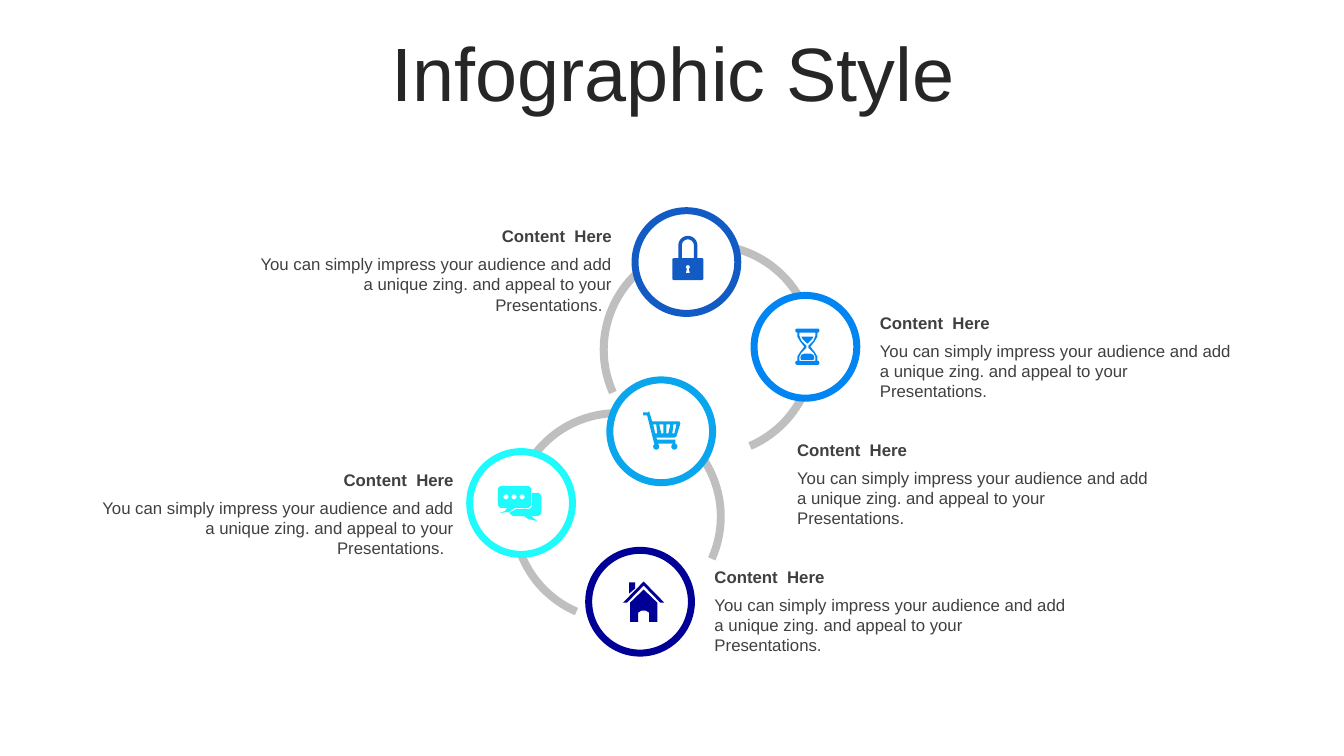
from dataclasses import dataclass
from math import cos, radians, sin

from pptx import Presentation
from pptx.dml.color import RGBColor
from pptx.enum.shapes import MSO_SHAPE
from pptx.enum.text import MSO_ANCHOR, MSO_AUTO_SIZE, PP_ALIGN
from pptx.util import Pt


@dataclass(frozen=True)
class Theme:
    """Colours, font, type sizes and shared measures in points."""
    font: str = "Arial"
    title_size: int = 54
    text_size: int = 12
    title: str = "262626"
    text: str = "404040"
    paper: str = "FFFFFF"
    track: str = "BFBFBF"
    ring_size: float = 73.4
    ring_line: int = 5
    caption_width: float = 270.7
    icon_unit: float = 0.72


THEME = Theme()
HEADING = "Content  Here"
BODY = ("You can simply impress your audience and add a unique zing. "
        "and appeal to your Presentations.")


def arc(x, y, radius, start, end, steps=12):
    """Return points along a circular arc, with angles in degrees."""
    angles = [radians(start + (end - start) * i / steps) for i in range(steps + 1)]
    return [(x + radius * cos(a), y + radius * sin(a)) for a in angles]


def disc(x, y, radius):
    """Return the outline of a disc."""
    return arc(x, y, radius, 0, 360, 24)


def rounded(left, top, right, bottom, radius):
    """Return the outline of a rectangle with round corners."""
    return (arc(left + radius, top + radius, radius, 180, 270)
            + arc(right - radius, top + radius, radius, 270, 360)
            + arc(right - radius, bottom - radius, radius, 0, 90)
            + arc(left + radius, bottom - radius, radius, 90, 180))


def symmetric(half, width):
    """Complete a left half outline with its mirror image."""
    return half + [(width - x, y) for x, y in reversed(half)]


LOCK = [
    rounded(0, 22, 31, 44, 2),
    arc(15.5, 9.5, 9.5, 180, 360) + [(25, 22), (21.5, 22)]
    + arc(15.5, 9.5, 6, 360, 180) + [(9.5, 22), (6, 22)],
    arc(15.5, 31, 2, 120, 420) + [(17.5, 37), (13.5, 37)],
]
HOURGLASS = [
    rounded(0, 0, 24, 4, 2),
    rounded(0, 32, 24, 36, 2),
    symmetric([(2, 4), (2, 8), (5, 13), (9, 18), (5, 23), (2, 28), (2, 32)], 24),
    symmetric([(4, 4), (4, 7), (6, 12), (11, 17), (11, 19), (6, 24), (4, 28), (4, 32)], 24),
    symmetric([(6, 8), (7, 10), (12, 15)], 24),
    symmetric([(9, 25), (6, 26), (5, 29), (6, 31)], 24),
]
CART = [
    [(6, 0), (9, 10), (36, 10), (37, 12), (33, 25), (31, 26), (13, 26), (14, 28),
     (32, 28), (32, 32), (11, 32), (4, 4), (0, 4), (0, 1), (5, 1)],
    [(10, 13), (12, 22), (14, 22), (13, 13)],
    [(16, 13), (18, 22), (20, 22), (20, 13)],
    [(23, 13), (23, 22), (25, 22), (27, 13)],
    [(30, 13), (29, 22), (31, 22), (33, 13)],
    disc(13, 35, 3),
    disc(31, 35, 3),
]
CHAT = [
    arc(4, 4, 4, 180, 270) + arc(29, 4, 4, 270, 360) + arc(29, 18, 4, 0, 90)
    + [(17, 22), (11, 26), (2, 27), (7, 25), (9, 22)] + arc(4, 18, 4, 90, 180),
    [(34, 7)] + arc(39, 11, 4, 270, 360) + arc(39, 26, 4, 0, 90)
    + [(33, 30), (39, 35), (30, 33), (26, 30), (15, 30), (11, 27), (18, 23)]
    + arc(30, 19, 4, 90, 0),
    *[disc(x, 11, 2.5) for x in (8, 16, 24)],
]
HOUSE = [
    symmetric([(20.5, 8), (7, 21), (7, 40), (15, 40), (15, 31), (18, 29)], 41),
    symmetric([(20.5, 0), (0, 21), (4, 21), (20.5, 4)], 41),
    [(6, 1), (12, 1), (12, 7), (6, 12)],
]

TRACKS = [(364.3, 292.3, 153.4, True), (428.4, 172.1, 155.5, False)]
LEFT, RIGHT = PP_ALIGN.LEFT, PP_ALIGN.RIGHT
STEPS = [
    ("125AC4", (453.6, 150.5), LOCK, (480.2, 168.5), (173.5, 157.7), RIGHT),
    ("0085F2", (538.6, 211), HOURGLASS, (568.1, 234.7), (621.4, 219.6), LEFT),
    ("0AA6ED", (435.6, 271.4), CART, (459.4, 293.8), (562.3, 310.3), LEFT),
    ("1FFBFD", (335.5, 322.6), CHAT, (355.7, 347), (60.5, 331.9), RIGHT),
    ("000096", (420.5, 393.1), HOUSE, (445, 415.4), (503.3, 401), LEFT),
]


def assign(target, values):
    """Set every attribute in a dict of format values."""
    for key, value in values.items():
        setattr(target, key, value)


def paint(shape, color):
    """Give a shape a plain fill without line or shadow."""
    shape.shadow.inherit = False
    shape.fill.solid()
    shape.fill.fore_color.rgb = RGBColor.from_string(color)
    shape.line.fill.background()


def write(frame, words, color, font, paragraph, layout):
    """Fill a text frame with one formatted paragraph."""
    assign(frame, {"word_wrap": True, **layout})
    line = frame.paragraphs[0]
    assign(line, paragraph)
    run = line.add_run()
    run.text = words
    assign(run.font, {"name": THEME.font, **font})
    run.font.color.rgb = RGBColor.from_string(color)


def add_title(slide, left, top, width, height):
    """Place the slide title in its box."""
    title = slide.shapes.title
    assign(title, {"left": Pt(left), "top": Pt(top), "width": Pt(width), "height": Pt(height)})
    write(title.text_frame, "Infographic Style", THEME.title,
          {"size": Pt(THEME.title_size)},
          {"alignment": PP_ALIGN.CENTER, "line_spacing": 0.9, "space_before": Pt(10)},
          {"vertical_anchor": MSO_ANCHOR.MIDDLE, "auto_size": MSO_AUTO_SIZE.NONE})


def add_track(slide, left, top, size, flipped):
    """Draw one curved track that joins the rings."""
    track = slide.shapes.add_shape(MSO_SHAPE.BLOCK_ARC, Pt(left), Pt(top), Pt(size), Pt(size))
    for index, value in enumerate((155.887 * 0.6, 66.705 * 0.6, 0.037)):
        track.adjustments[index] = value
    if flipped:
        track._element.spPr.xfrm.set("flipH", "1")
    paint(track, THEME.track)


def add_ring(slide, left, top, color):
    """Draw a white disc with a coloured rim."""
    size = Pt(THEME.ring_size)
    ring = slide.shapes.add_shape(MSO_SHAPE.OVAL, Pt(left), Pt(top), size, size)
    paint(ring, THEME.paper)
    ring.line.width = Pt(THEME.ring_line)
    ring.line.color.rgb = RGBColor.from_string(color)


def add_icon(slide, left, top, outlines, color):
    """Draw an icon from its outlines, measured from its top left corner."""
    placed = [[(Pt(left + x * THEME.icon_unit), Pt(top + y * THEME.icon_unit))
               for x, y in outline] for outline in outlines]
    builder = slide.shapes.build_freeform(*placed[0][0])
    for index, outline in enumerate(placed):
        if index:
            builder.move_to(*outline[0])
        builder.add_line_segments(outline[1:], close=True)
    paint(builder.convert_to_shape(), color)


def add_caption(slide, left, top, alignment):
    """Place a heading with its text below, as one group."""
    caption = slide.shapes.add_group_shape()
    body = BODY + "  " if alignment == RIGHT else BODY
    parts = [(HEADING, 0, 21.6, True, MSO_ANCHOR.MIDDLE),
             (body, 20.2, 36, False, MSO_ANCHOR.TOP)]
    for words, offset, height, bold, anchor in parts:
        part = caption.shapes.add_textbox(
            Pt(left), Pt(top + offset), Pt(THEME.caption_width), Pt(height))
        write(part.text_frame, words, THEME.text,
              {"size": Pt(THEME.text_size), "bold": bold}, {"alignment": alignment},
              {"vertical_anchor": anchor, "auto_size": MSO_AUTO_SIZE.SHAPE_TO_FIT_TEXT})


def main():
    """Build the slide and save it."""
    deck = Presentation()
    assign(deck, {"slide_width": Pt(960), "slide_height": Pt(540)})
    slide = deck.slides.add_slide(deck.slide_layouts[5])
    add_title(slide, 25.2, 26.6, 911.5, 56.9)
    for track in TRACKS:
        add_track(slide, *track)
    for color, ring, outlines, icon, caption, alignment in STEPS:
        add_ring(slide, *ring, color)
        add_caption(slide, *caption, alignment)
        add_icon(slide, *icon, outlines, color)
    deck.save("out.pptx")


if __name__ == "__main__":
    main()
